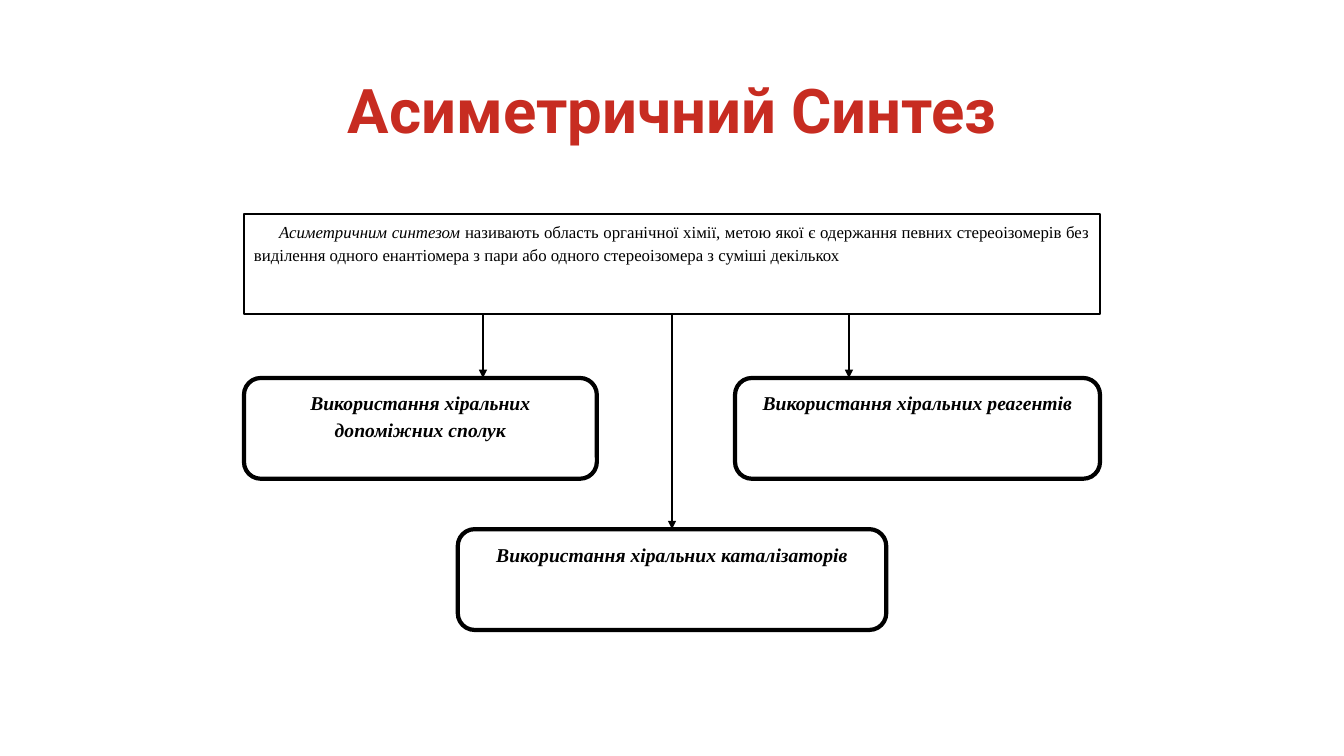
from dataclasses import dataclass

from lxml import etree
from pptx import Presentation
from pptx.dml.color import RGBColor
from pptx.enum.shapes import MSO_CONNECTOR, MSO_SHAPE
from pptx.enum.text import MSO_ANCHOR, PP_ALIGN
from pptx.oxml.ns import qn
from pptx.util import Inches, Pt

RECTANGLE = MSO_SHAPE.RECTANGLE
ROUNDED = MSO_SHAPE.ROUNDED_RECTANGLE
STRAIGHT = MSO_CONNECTOR.STRAIGHT
TOP, MIDDLE = MSO_ANCHOR.TOP, MSO_ANCHOR.MIDDLE
CENTER, JUSTIFY = PP_ALIGN.CENTER, PP_ALIGN.JUSTIFY
TOP_SIDE, BOTTOM_SIDE = 0, 2


@dataclass(frozen=True)
class Theme:
    red: RGBColor = RGBColor(0xC7, 0x2C, 0x21)
    black: RGBColor = RGBColor(0, 0, 0)
    white: RGBColor = RGBColor(255, 255, 255)
    title_font: str = "Roboto"
    body_font: str = "Times New Roman"
    title_size: int = 44
    definition_size: int = 12
    method_size: int = 14
    thin: float = 1.5
    thick: float = 3


THEME = Theme()
TERM = "Асиметричним синтезом"
DEFINITION = (
    " називають область органічної хімії, метою якої є одержання певних "
    "стереоізомерів без виділення одного енантіомера з пари або одного "
    "стереоізомера з суміші декількох"
)
METHODS = [
    ("Використання хіральних допоміжних сполук", 0, 0.63, 3.5),
    ("Використання хіральних реагентів", 4.87, 0.63, 3.62),
    ("Використання хіральних каталізаторів", 2.12, 2.13, 4.25),
]
SIDE_ARROWS = [2.37, 6.0]
BOX_HEIGHT = 1


def style_span(span, font, size, color, bold=False, italic=False):
    span.font.name = font
    span.font.size = Pt(size)
    span.font.color.rgb = color
    span.font.bold = bold
    span.font.italic = italic


def add_title(page, text, left, top, width, height):
    title = page.shapes.title
    title.left, title.top = Inches(left), Inches(top)
    title.width, title.height = Inches(width), Inches(height)
    title.text_frame.text = text
    title.text_frame.vertical_anchor = MIDDLE
    para = title.text_frame.paragraphs[0]
    para.alignment = CENTER
    para.line_spacing = 0.9
    style_span(para.runs[0], THEME.title_font, THEME.title_size, THEME.red, bold=True)


def add_box(page, kind, left, top, width, border, alignment):
    box = page.shapes.add_shape(
        kind, Inches(left), Inches(top), Inches(width), Inches(BOX_HEIGHT)
    )
    box.shadow.inherit = False
    box.fill.solid()
    box.fill.fore_color.rgb = THEME.white
    box.line.color.rgb = THEME.black
    box.line.width = Pt(border)
    box.text_frame.word_wrap = True
    box.text_frame.vertical_anchor = TOP
    para = box.text_frame.paragraphs[0]
    para.alignment = alignment
    para.line_spacing = 1.15
    para.space_after = Pt(10)
    return box


def add_definition(page, left, top, width):
    box = add_box(page, RECTANGLE, left, top, width, THEME.thin, JUSTIFY)
    para = box.text_frame.paragraphs[0]
    properties = para._p.get_or_add_pPr()
    properties.set("marL", "0")
    properties.set("indent", str(Inches(0.25)))
    for text, italic in [(TERM, True), (DEFINITION, False)]:
        span = para.add_run()
        span.text = text
        style_span(span, THEME.body_font, THEME.definition_size, THEME.black, italic=italic)
    return box


def add_method(page, text, left, top, width):
    box = add_box(page, ROUNDED, left, top, width, THEME.thick, CENTER)
    para = box.text_frame.paragraphs[0]
    para.text = text
    style_span(
        para.runs[0], THEME.body_font, THEME.method_size, THEME.black, bold=True, italic=True
    )
    return box


def add_arrow(page, x, top, bottom):
    arrow = page.shapes.add_connector(
        STRAIGHT, Inches(x), Inches(top), Inches(x), Inches(bottom)
    )
    arrow.line.color.rgb = THEME.black
    arrow.line.width = Pt(THEME.thin)
    etree.SubElement(arrow.line._get_or_add_ln(), qn("a:tailEnd"), type="triangle")
    etree.SubElement(arrow._element.spPr, qn("a:effectLst"))
    return arrow


def add_scheme(page, left, top, width):
    definition = add_definition(page, left, top, width)
    bottom = top + BOX_HEIGHT
    methods = [
        add_method(page, text, left + offset, bottom + drop, box_width)
        for text, offset, drop, box_width in METHODS
    ]
    for offset, (_, _, drop, _) in zip(SIDE_ARROWS, METHODS):
        add_arrow(page, left + offset, bottom, bottom + drop)
    center_arrow = add_arrow(page, left + width / 2, bottom, bottom + METHODS[-1][2])
    center_arrow.begin_connect(definition, BOTTOM_SIDE)
    center_arrow.end_connect(methods[-1], TOP_SIDE)


def main():
    deck = Presentation()
    deck.slide_width, deck.slide_height = Inches(13.33), Inches(7.5)
    page = deck.slides.add_slide(deck.slide_layouts[5])
    add_title(page, "Асиметричний Синтез", 0.92, 0.4, 11.5, 1.45)
    add_scheme(page, 2.42, 2.12, 8.49)
    deck.save("out.pptx")


if __name__ == "__main__":
    main()
